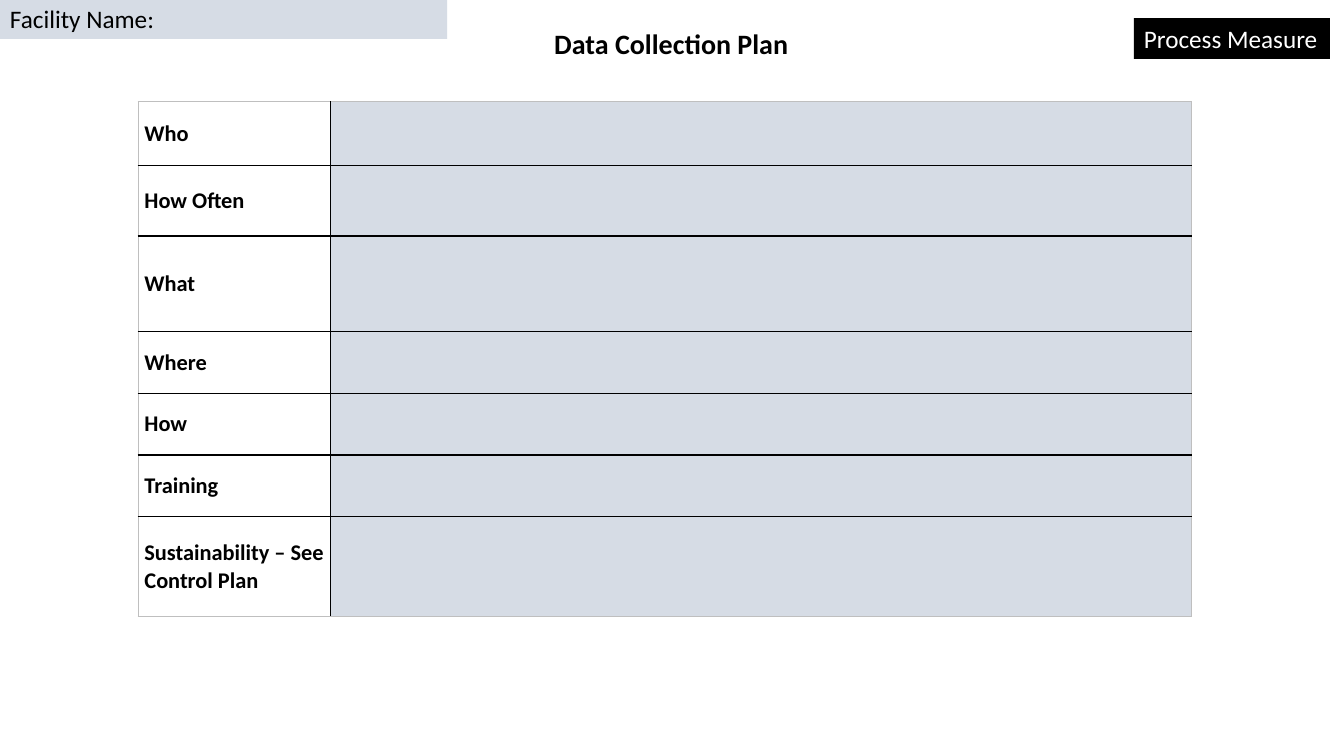
"""Build the data collection plan slide for a process measure."""
from dataclasses import dataclass

from lxml import etree
from pptx import Presentation
from pptx.dml.color import RGBColor
from pptx.enum.shapes import MSO_SHAPE
from pptx.enum.text import MSO_ANCHOR, PP_ALIGN
from pptx.oxml.ns import qn
from pptx.util import Pt

RECTANGLE = MSO_SHAPE.RECTANGLE
MIDDLE = MSO_ANCHOR.MIDDLE
LEFT = PP_ALIGN.LEFT
FONT = "Calibri"
COLORS = {
    "black": "000000",
    "white": "FFFFFF",
    "entry": "D6DCE5",
    "frame": "BFBFBF",
}
COLUMN_WIDTHS = (137.3, 614.9)


@dataclass(frozen=True)
class PlanRow:
    label: str
    height: float


@dataclass(frozen=True)
class Label:
    text: str
    left: float
    top: float
    width: float
    height: float
    size: float
    color: str = "black"
    fill: str | None = None
    bold: bool = False
    wrap: bool = False


PLAN_ROWS = (
    PlanRow("Who", 45.5),
    PlanRow("How Often", 50.5),
    PlanRow("What", 68.5),
    PlanRow("Where", 44),
    PlanRow("How", 44),
    PlanRow("Training", 44),
    PlanRow("Sustainability – See Control Plan", 71.5),
)
LABELS = (
    Label("Data Collection Plan", 388.8, 15.1, 182.9, 31.5, 20, bold=True),
    Label("Facility Name:", 0, -1.2, 319.5, 29, 18, fill="entry", wrap=True),
    Label("Process Measure", 810, 13, 139.9, 29, 18, color="white", fill="black"),
)


def rgb(name: str) -> RGBColor:
    return RGBColor.from_string(COLORS[name])


def style_font(paragraph, size: float, color: str, bold: bool) -> None:
    paragraph.alignment = LEFT
    paragraph.font.name = FONT
    paragraph.font.size = Pt(size)
    paragraph.font.bold = bold
    paragraph.font.color.rgb = rgb(color)


def set_borders(cell, edges: dict[str, str]) -> None:
    properties = cell._tc.get_or_add_tcPr()
    for index, (edge, color) in enumerate(edges.items()):
        line = etree.Element(qn(f"a:{edge}"), w=str(Pt(1)))
        fill = etree.SubElement(line, qn("a:solidFill"))
        etree.SubElement(fill, qn("a:srgbClr"), val=COLORS[color])
        properties.insert(index, line)


def add_plan_table(slide) -> None:
    last_row, last_column = len(PLAN_ROWS) - 1, len(COLUMN_WIDTHS) - 1
    height = sum(row.height for row in PLAN_ROWS)
    table = slide.shapes.add_table(
        len(PLAN_ROWS), len(COLUMN_WIDTHS),
        Pt(98.7), Pt(72.6), Pt(sum(COLUMN_WIDTHS)), Pt(height),
    ).table
    table.first_row = table.horz_banding = False
    for column, width in zip(table.columns, COLUMN_WIDTHS):
        column.width = Pt(width)
    for row_index, plan_row in enumerate(PLAN_ROWS):
        table.rows[row_index].height = Pt(plan_row.height)
        for column_index, text in enumerate((plan_row.label, "")):
            cell = table.cell(row_index, column_index)
            cell.fill.solid()
            cell.fill.fore_color.rgb = rgb("entry" if column_index else "white")
            cell.vertical_anchor = MIDDLE
            cell.margin_left = cell.margin_right = Pt(4.5)
            cell.margin_top = cell.margin_bottom = Pt(0)
            cell.text = text
            paragraph = cell.text_frame.paragraphs[0]
            paragraph.space_before = paragraph.space_after = Pt(6)
            style_font(paragraph, 16, "black", bold=True)
            set_borders(cell, {
                "lnL": "black" if column_index else "frame",
                "lnR": "black" if column_index < last_column else "frame",
                "lnT": "black" if row_index else "frame",
                "lnB": "black" if row_index < last_row else "frame",
            })


def add_label(slide, label: Label) -> None:
    bounds = [Pt(value) for value in (label.left, label.top, label.width, label.height)]
    if label.fill:
        shape = slide.shapes.add_shape(RECTANGLE, *bounds)
        shape.shadow.inherit = False
        shape.fill.solid()
        shape.fill.fore_color.rgb = rgb(label.fill)
        shape.line.fill.background()
    else:
        shape = slide.shapes.add_textbox(*bounds)
    frame = shape.text_frame
    frame.word_wrap = label.wrap
    frame.vertical_anchor = MIDDLE
    frame.text = label.text
    style_font(frame.paragraphs[0], label.size, label.color, label.bold)


def main() -> None:
    presentation = Presentation()
    presentation.slide_width, presentation.slide_height = Pt(960), Pt(540)
    slide = presentation.slides.add_slide(presentation.slide_layouts[6])
    add_plan_table(slide)
    for label in LABELS:
        add_label(slide, label)
    presentation.save("out.pptx")


if __name__ == "__main__":
    main()
